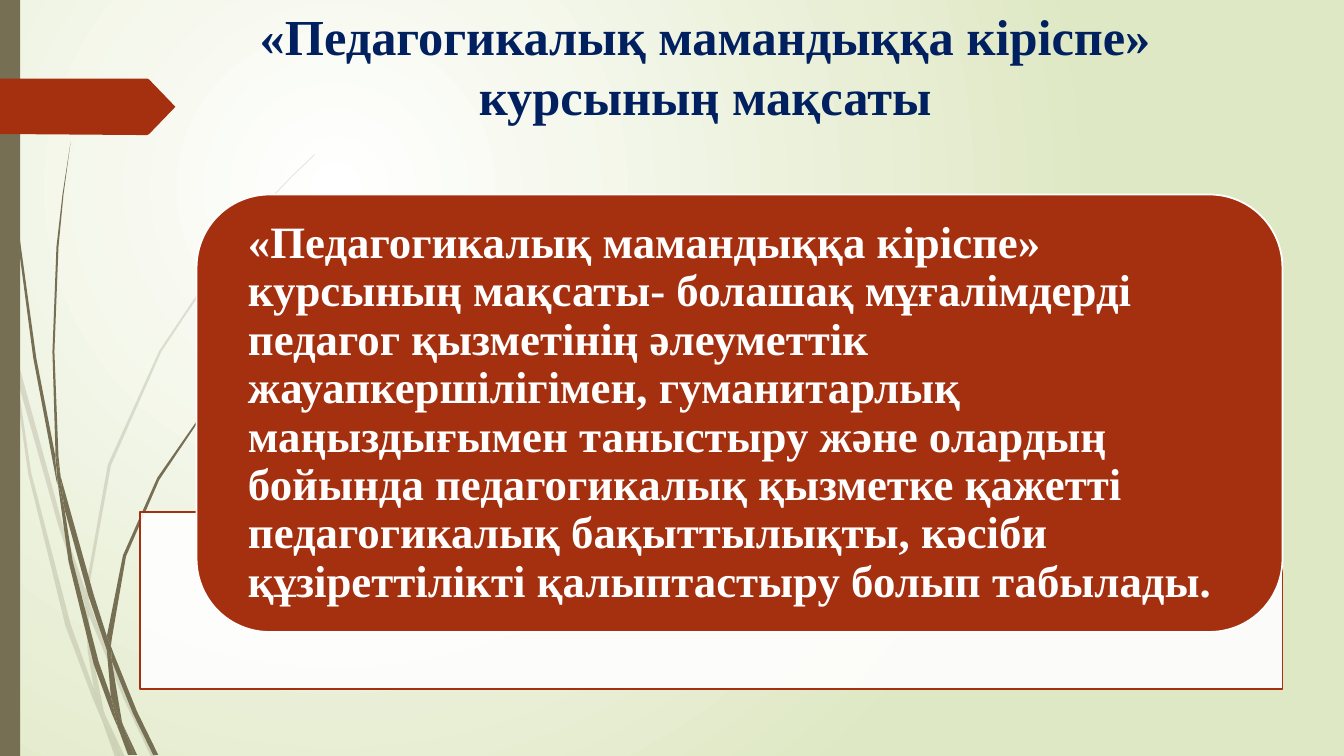
from lxml import etree
from pptx import Presentation
from pptx import util as u
from pptx.dml import color as c
from pptx.enum import shapes as s
from pptx.enum import text as t
from pptx.oxml import ns

WHITE = c.RGBColor(0xFF, 0xFF, 0xFF)
LIME = c.RGBColor(0xDF, 0xE8, 0xC4)
MOSS = c.RGBColor(0x76, 0x6F, 0x54)
RUST = c.RGBColor(0xA5, 0x30, 0x10)
NAVY = c.RGBColor(0x00, 0x20, 0x60)

COURSE = "«Педагогикалық мамандыққа кіріспе» курсының мақсаты"
GOAL = (
    COURSE + "- болашақ мұғалімдерді педагог қызметінің әлеуметтік "
    "жауапкершілігімен, гуманитарлық маңыздығымен таныстыру және олардың "
    "бойында педагогикалық қызметке қажетті педагогикалық бақыттылықты, "
    "кәсіби құзіреттілікті қалыптастыру болып табылады."
)

PALE = [
    [(0.11, 3.5), (0.09, 3.22), (0, 2.82), (0, 2.99), (0.1, 3.44)],
    [(0.58, 5.22), (0.84, 5.99), (0.85, 5.86), (0.62, 5.2), (0.14, 3.45),
     (0.17, 3.76)],
    [(0.92, 6.07), (0.88, 5.96), (0.88, 6.1), (1.23, 6.94), (1.5, 7.51),
     (1.55, 7.51), (1.27, 6.92)],
    [(1.19, 7.51), (1.24, 7.51), (1.05, 7.11)],
    [(0.93, 6.83), (0.7, 6.19), (0.31, 4.69), (0.17, 3.76), (0.11, 3.5),
     (0.28, 4.7), (0.65, 6.21), (0.92, 6.93), (1.01, 7.14), (0.99, 7.07)],
    [(0.84, 5.99), (0.87, 6.46), (0.93, 6.83), (0.96, 6.92), (1.05, 7.11),
     (1.03, 7.06), (0.91, 6.46), (0.88, 6.1), (0.88, 6.08)],
    [(0.88, 5.84), (1.1, 4.62), (1.6, 3.49), (2.29, 2.45), (2.68, 1.98),
     (2.9, 1.75), (3.12, 1.54), (3.12, 1.53), (2.89, 1.75), (2.68, 1.97),
     (2.28, 2.44), (1.58, 3.48), (1.07, 4.61), (0.85, 5.84), (0.85, 5.86),
     (0.88, 5.96)],
    [(1.01, 7.14), (1.14, 7.51), (1.19, 7.51)],
    [(0.88, 6.08), (0.88, 6.1), (0.88, 5.96), (0.85, 5.86), (0.84, 5.99)],
    [(0.96, 6.92), (0.93, 6.83), (0.99, 7.07), (1.01, 7.14), (1.19, 7.51),
     (1.05, 7.11)],
]
DARK = [
    [(0.07, 1.1), (0.17, 2.33), (0.33, 3.55), (0.56, 4.77), (0.57, 4.81),
     (0.55, 4.57), (0.55, 4.53), (0.36, 3.55), (0.19, 2.32), (0.08, 1.09),
     (0.05, 0.48), (0.04, 0), (0.03, 0), (0.04, 0.48)],
    [(0.88, 5.92), (1.06, 6.45), (1.06, 6.33), (1.06, 6.31), (0.93, 5.9),
     (0.6, 4.72), (0.64, 5.05)],
    [(1.13, 6.49), (1.1, 6.41), (1.11, 6.56), (1.32, 7.08), (1.52, 7.49),
     (1.57, 7.49), (1.36, 7.06)],
    [(1.1, 6.91), (0.98, 6.57), (0.72, 5.56), (0.64, 5.05), (0.57, 4.77),
     (0.68, 5.57), (0.93, 6.59), (1.11, 7.08), (1.17, 7.22), (1.16, 7.17)],
    [(0.6, 4.72), (0.58, 4.53), (0.54, 3.49), (0.58, 2.45), (0.63, 1.93),
     (0.7, 1.41), (0.62, 1.93), (0.56, 2.45), (0.52, 3.49), (0.55, 4.49)],
    [(1.33, 7.49), (1.36, 7.49), (1.22, 7.19)],
    [(0.57, 4.77), (0.64, 5.05), (0.6, 4.72), (0.55, 4.49), (0.55, 4.53)],
    [(1.11, 6.33), (1.25, 5.52), (1.58, 4.76), (2.05, 4.06), (2.31, 3.74),
     (2.45, 3.59), (2.61, 3.44), (2.6, 3.44), (2.45, 3.58), (2.31, 3.73),
     (2.04, 4.05), (1.56, 4.74), (1.22, 5.51), (1.06, 6.31), (1.1, 6.41)],
    [(1.17, 7.22), (1.27, 7.49), (1.31, 7.49)],
    [(1.06, 6.45), (1.1, 6.91), (1.16, 7.06), (1.22, 7.19), (1.21, 7.16),
     (1.11, 6.56), (1.09, 6.51)],
    [(1.06, 6.45), (1.09, 6.51), (1.11, 6.56), (1.1, 6.41), (1.06, 6.31),
     (1.06, 6.33)],
    [(1.16, 7.06), (1.1, 6.91), (1.16, 7.17), (1.17, 7.22), (1.3, 7.49),
     (1.33, 7.49), (1.22, 7.19)],
]
ARROW = [(1.74, 1.06), (1.48, 1.33), (1.46, 1.34), (1.36, 1.34), (0, 1.33),
         (0, 0.78), (1.46, 0.78), (1.48, 0.79)]


def paint(shape, fill, line=None, alpha=100):
    shape.shadow.inherit = False
    shape.fill.solid()
    shape.fill.fore_color.rgb = fill
    if alpha < 100:
        tint = shape.element.xpath("./p:spPr/a:solidFill/a:srgbClr")[0]
        etree.SubElement(tint, ns.qn("a:alpha"), val=str(alpha * 1000))
    if line is None:
        shape.line.fill.background()
    else:
        shape.line.color.rgb = line
        shape.line.width = u.Pt(1.25)


def form(host, spots, fill, alpha=100):
    first, *rest = [(u.Inches(x), u.Inches(y)) for x, y in spots]
    pen = host.build_freeform(*first)
    pen.add_line_segments(rest, close=True)
    paint(pen.convert_to_shape(), fill, alpha=alpha)


def grass(host, blades, alpha):
    group = host.add_group_shape()
    for blade in blades:
        form(group.shapes, blade, MOSS, alpha)


def block(host, kind, box, fill, line=None, alpha=100):
    paint(host.add_shape(kind, *map(u.Inches, box)), fill, line, alpha)


def write(host, box, words, size, ink, frame, para):
    body = host.add_textbox(*map(u.Inches, box)).text_frame
    line = body.paragraphs[0]
    run = line.add_run()
    run.text = words
    run.font.color.rgb = ink
    look = {"name": "Times New Roman", "size": u.Pt(size), "bold": True}
    for part, style in ((body, frame), (line, para), (run.font, look)):
        for key, value in style.items():
            setattr(part, key, value)


def glow(slide):
    fill = slide.background.fill
    fill.gradient()
    for stop, tone in zip(fill.gradient_stops, (WHITE, LIME)):
        stop.color.rgb = tone
    grad = slide.element.xpath(".//p:bg//a:gradFill")[0]
    old = grad.find(ns.qn("a:lin"))
    ring = etree.Element(ns.qn("a:path"), path="circle")
    etree.SubElement(ring, ns.qn("a:fillToRect"),
                     l="50000", t="50000", r="100000", b="100000")
    grad.replace(old, ring)


def main():
    deck = Presentation()
    deck.slide_width = u.Inches(13.33)
    deck.slide_height = u.Inches(7.5)
    slide = deck.slides.add_slide(deck.slide_layouts[6])
    host = slide.shapes
    kinds = s.MSO_SHAPE
    glow(slide)
    grass(host, PALE, 20)
    grass(host, DARK, 100)
    block(host, kinds.RECTANGLE, (0, 0, 0.2, 7.5), MOSS)
    form(host, ARROW, RUST)
    write(host, (1.69, 0, 10.61, 1.4), COURSE, 36, NAVY,
          {"word_wrap": True}, {"alignment": t.PP_ALIGN.CENTER})
    block(host, kinds.RECTANGLE, (1.39, 5.08, 11.33, 1.76), WHITE, RUST, 90)
    block(host, kinds.ROUNDED_RECTANGLE, (1.95, 1.93, 10.77, 4.34), RUST, WHITE)
    write(host, (2.16, 2.14, 10.34, 3.92), GOAL, 32, WHITE,
          {"word_wrap": True, "vertical_anchor": t.MSO_ANCHOR.MIDDLE,
           "margin_left": u.Inches(0.3), "margin_right": u.Inches(0.3),
           "margin_top": 0, "margin_bottom": 0},
          {"line_spacing": 0.9, "alignment": t.PP_ALIGN.LEFT})
    deck.save("out.pptx")


if __name__ == "__main__":
    main()
